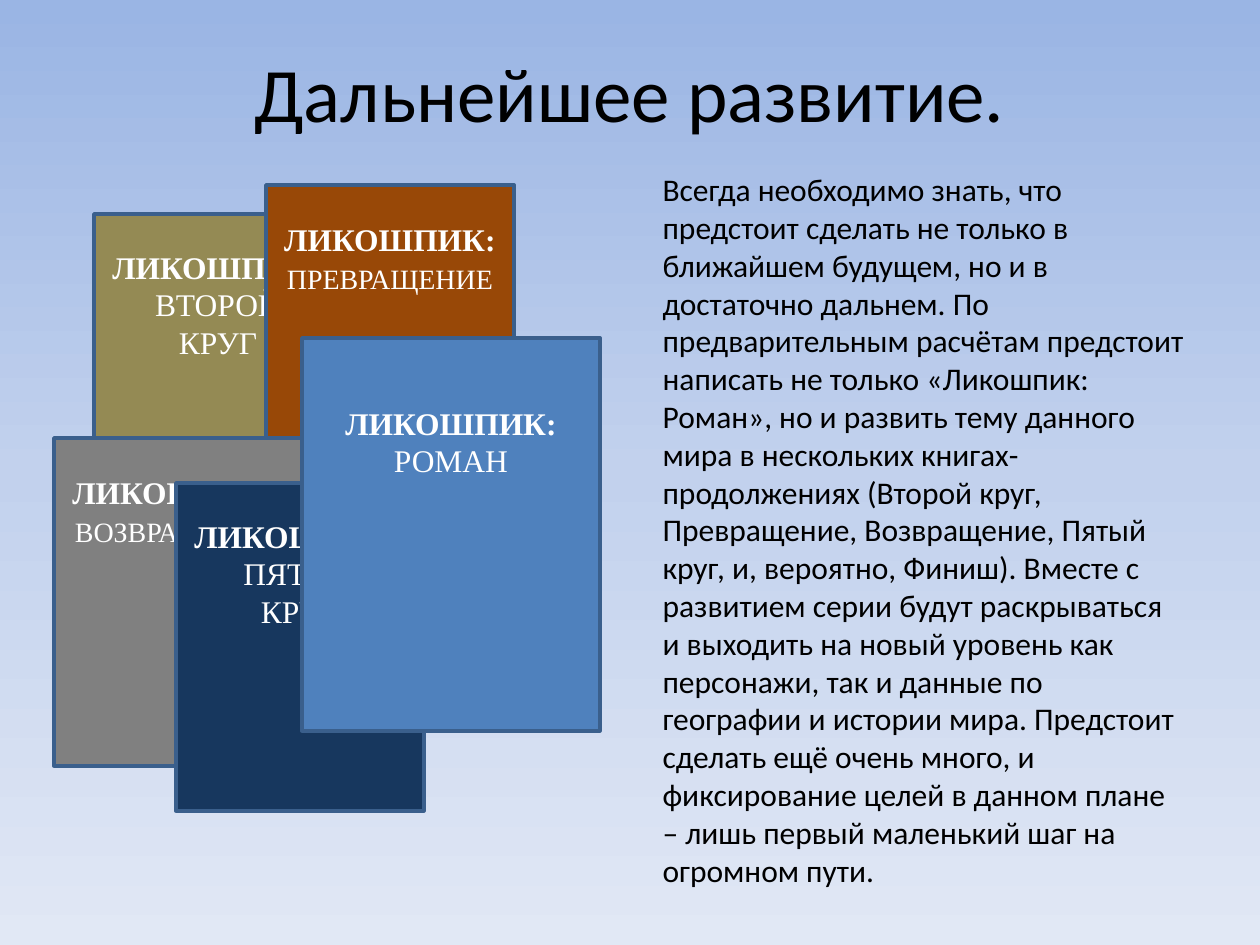
from copy import deepcopy

from pptx import Presentation
from pptx.dml.color import RGBColor
from pptx.enum.shapes import MSO_SHAPE
from pptx.enum.text import MSO_ANCHOR, MSO_AUTO_SIZE, PP_ALIGN
from pptx.oxml.ns import qn
from pptx.util import Emu, Inches, Pt

RECTANGLE = MSO_SHAPE.RECTANGLE
TOP, MIDDLE = MSO_ANCHOR.TOP, MSO_ANCHOR.MIDDLE
CENTER = PP_ALIGN.CENTER
NO_AUTOFIT = MSO_AUTO_SIZE.NONE

PX_PER_INCH = 126
TITLE_AND_CONTENT = 1

COLORS = {
    "text": "000000",
    "cover_text": "FFFFFF",
    "cover_line": "3A5F8C",
    "olive": "948A54",
    "brown": "984807",
    "gray": "808080",
    "navy": "17375E",
    "blue": "4F81BD",
}
BACKGROUND_STOPS = [(0, "9AB5E4"), (0.5, "C2D1ED"), (1, "E1E8F5")]

SERIES = "ЛИКОШПИК:"
SMALL_COVER = (248, 328)
LARGE_COVER = (298, 393)
# left and top, size, fill, space above the text, subtitle size, subtitle lines
COVERS = [
    ((94, 214), SMALL_COVER, "olive", 34, 18, ["ВТОРОЙ", "КРУГ"]),
    ((266, 185), SMALL_COVER, "brown", 35, 16, ["ПРЕВРАЩЕНИЕ"]),
    ((54, 438), SMALL_COVER, "gray", 35, 16, ["ВОЗВРАЩЕНИЕ"]),
    ((176, 483), SMALL_COVER, "navy", 34, 18, ["ПЯТЫЙ", "КРУГ"]),
    ((302, 338), LARGE_COVER, "blue", 66, 18, ["РОМАН"]),
]
BODY = (
    "Всегда необходимо знать, что предстоит сделать не только в ближайшем "
    "будущем, но и в достаточно дальнем. По предварительным расчётам предстоит "
    "написать не только «Ликошпик: Роман», но и развить тему данного мира в "
    "нескольких книгах-продолжениях (Второй круг, Превращение, Возвращение, "
    "Пятый круг, и, вероятно, Финиш). Вместе с развитием серии будут "
    "раскрываться и выходить на новый уровень как персонажи, так и данные по "
    "географии и истории мира. Предстоит сделать ещё очень много, и "
    "фиксирование целей в данном плане – лишь первый маленький шаг на "
    "огромном пути."
)


def px(value):
    return Emu(round(value * Inches(1) / PX_PER_INCH))


def rgb(name):
    return RGBColor.from_string(COLORS[name])


def set_font(paragraph, name, size, color, bold=False):
    font = paragraph.font
    font.name = name
    font.size = Pt(size)
    font.bold = bold
    font.color.rgb = rgb(color)


def paint_background(slide):
    fill = slide.background.fill
    fill.gradient()
    fill.gradient_angle = 270
    stop_list = slide.element.find(".//" + qn("a:gsLst"))
    stop_list.append(deepcopy(stop_list[0]))
    for stop, (position, color) in zip(fill.gradient_stops, BACKGROUND_STOPS):
        stop.position = position
        stop.color.rgb = RGBColor.from_string(color)


def fill_placeholder(shape, box, text, size):
    """Place and fill a placeholder, and return its only paragraph."""
    shape.left, shape.top, shape.width, shape.height = map(px, box)
    frame = shape.text_frame
    frame.text = text
    frame.auto_size = NO_AUTOFIT
    paragraph = frame.paragraphs[0]
    set_font(paragraph, "Calibri", size, "text")
    return paragraph


def remove_bullet(paragraph):
    properties = paragraph._p.get_or_add_pPr()
    properties.set("marL", "0")
    properties.set("indent", "0")
    properties.insert_element_before(
        properties.makeelement(qn("a:buNone"), {}), "a:tabLst", "a:defRPr", "a:extLst"
    )


def add_cover(slide, corner, size, color, space_above, subtitle_size, subtitle):
    shape = slide.shapes.add_shape(RECTANGLE, *map(px, corner + size))
    shape.shadow.inherit = False
    shape.fill.solid()
    shape.fill.fore_color.rgb = rgb(color)
    shape.line.color.rgb = rgb("cover_line")
    shape.line.width = Pt(2)

    frame = shape.text_frame
    frame.word_wrap = True
    frame.vertical_anchor = TOP
    frame.margin_top = px(space_above)
    frame.text = "\n".join([SERIES, *subtitle])
    for index, paragraph in enumerate(frame.paragraphs):
        is_series = index == 0
        paragraph.alignment = CENTER
        paragraph.line_spacing = Pt(21.5)
        set_font(paragraph, "Times New Roman", 18 if is_series else subtitle_size,
                 "cover_text", bold=is_series)


def main():
    presentation = Presentation()
    presentation.slide_width = Inches(10)
    presentation.slide_height = Inches(7.5)
    slide = presentation.slides.add_slide(presentation.slide_layouts[TITLE_AND_CONTENT])
    paint_background(slide)

    title = slide.shapes.title
    heading = fill_placeholder(title, (63, 38, 1134, 107), "Дальнейшее развитие.", 44)
    heading.alignment = CENTER
    title.text_frame.vertical_anchor = MIDDLE

    body = fill_placeholder(slide.placeholders[1], (650, 164, 547, 680), BODY, 18)
    remove_bullet(body)

    for cover in COVERS:
        add_cover(slide, *cover)

    presentation.save("out.pptx")


if __name__ == "__main__":
    main()
